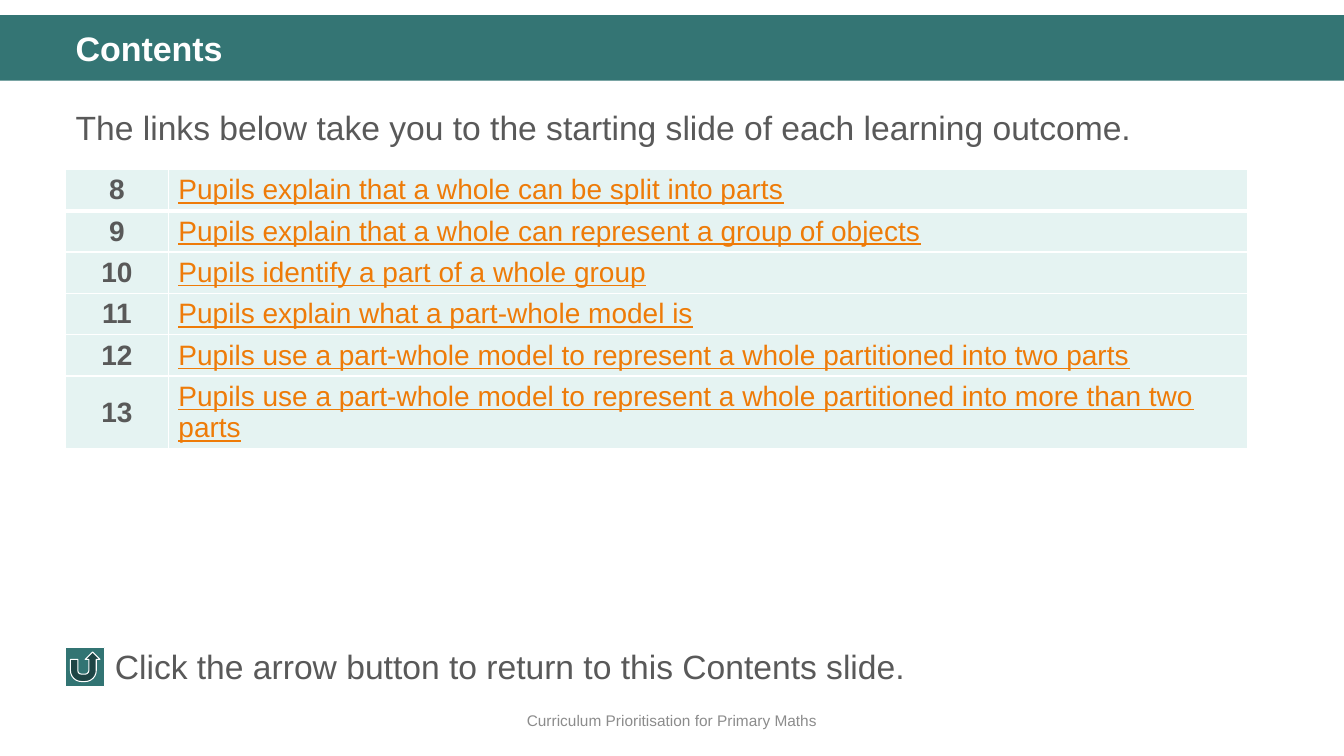
"""Build the contents slide of a primary maths deck."""
from dataclasses import dataclass

from lxml import etree
from pptx import Presentation
from pptx import util as u
from pptx.dml.color import RGBColor
from pptx.enum import shapes, text
from pptx.oxml import ns


@dataclass(frozen=True)
class Theme:
    """Hold the font, colours and type sizes."""
    font: str = "Arial"
    white: str = "FFFFFF"
    band: str = "347574"
    button: str = "327473"
    row: str = "E5F3F2"
    ink: str = "595959"
    link: str = "EE7B08"
    muted: str = "8C8C8C"
    title: float = 24.3
    body: float = 24
    table: float = 20
    footer: float = 11


THEME = Theme()
FIRST_NUMBER = 8
OUTCOMES = [
    "Pupils explain that a whole can be split into parts",
    "Pupils explain that a whole can represent a group of objects",
    "Pupils identify a part of a whole group",
    "Pupils explain what a part-whole model is",
    "Pupils use a part-whole model to represent a whole partitioned into two parts",
    "Pupils use a part-whole model to represent a whole partitioned into more than two parts",
]


def inches(*lengths):
    """Convert numbers to lengths."""
    return [u.Inches(length) for length in lengths]


def write(frame, words, size, colour, bold=False, underline=False,
          align=text.PP_ALIGN.LEFT, spacing=1.0, anchor=text.MSO_ANCHOR.TOP):
    """Write one formatted paragraph into a text frame."""
    frame.word_wrap = True
    frame.vertical_anchor = anchor
    para = frame.paragraphs[0]
    para.alignment = align
    para.line_spacing = spacing
    para.space_before = u.Pt(0)
    span = para.add_run()
    span.text = words
    span.font.name = THEME.font
    span.font.size = u.Pt(size)
    span.font.bold = bold
    span.font.underline = underline
    span.font.color.rgb = RGBColor.from_string(colour)


def remove_bullet(para):
    """Clear the bullet and its indent."""
    props = para._p.get_or_add_pPr()
    props.set("marL", "0")
    props.set("indent", "0")
    etree.SubElement(props, ns.qn("a:buNone"))


def fill_placeholder(holder, bounds, words, size, colour, **style):
    """Move a placeholder and write its text."""
    holder.left, holder.top, holder.width, holder.height = inches(*bounds)
    holder.text_frame.auto_size = text.MSO_AUTO_SIZE.NONE
    remove_bullet(holder.text_frame.paragraphs[0])
    write(holder.text_frame, words, size, colour, **style)


def add_label(page, bounds, words, size, colour, **style):
    """Add a text box."""
    box = page.shapes.add_textbox(*inches(*bounds))
    write(box.text_frame, words, size, colour, **style)


def add_block(page, kind, bounds, fill, line=None):
    """Add a filled preset shape."""
    block = page.shapes.add_shape(kind, *inches(*bounds))
    block.shadow.inherit = False
    block.fill.solid()
    block.fill.fore_color.rgb = RGBColor.from_string(fill)
    if line:
        block.line.color.rgb = RGBColor.from_string(line)
        block.line.width = u.Pt(0.75)
    else:
        block.line.fill.background()
    return block


def style_cell(cell, top, bottom):
    """Give a cell its white borders and its fill."""
    props = cell._tc.get_or_add_tcPr()
    for side, width in (("L", 1), ("R", 1), ("T", top), ("B", bottom)):
        border = etree.SubElement(props, ns.qn(f"a:ln{side}"), w=str(u.Pt(width)))
        paint = etree.SubElement(border, ns.qn("a:solidFill"))
        etree.SubElement(paint, ns.qn("a:srgbClr"), val=THEME.white)
    cell.fill.solid()
    cell.fill.fore_color.rgb = RGBColor.from_string(THEME.row)
    cell.vertical_anchor = text.MSO_ANCHOR.MIDDLE


def add_outcomes(page):
    """Add the table of numbered learning outcomes."""
    heights = [0.41] * (len(OUTCOMES) - 1) + [0.71]
    widths = [1.02, 10.7]
    bounds = inches(0.65, 1.68, sum(widths), sum(heights))
    table = page.shapes.add_table(len(heights), len(widths), *bounds).table
    table.first_row = table.horz_banding = False
    for column, width in zip(table.columns, widths):
        column.width = u.Inches(width)
    for index, (row, height, outcome) in enumerate(zip(table.rows, heights, OUTCOMES)):
        row.height = u.Inches(height)
        number, link = row.cells
        for cell in (number, link):
            style_cell(cell, 3 if index == 1 else 1, 3 if index == 0 else 1)
        write(number.text_frame, str(FIRST_NUMBER + index), THEME.table, THEME.ink,
              bold=True, align=text.PP_ALIGN.CENTER, anchor=text.MSO_ANCHOR.MIDDLE)
        write(link.text_frame, outcome, THEME.table, THEME.link,
              underline=True, anchor=text.MSO_ANCHOR.MIDDLE)


def main():
    """Build and save the deck."""
    deck = Presentation()
    deck.slide_width, deck.slide_height = inches(13.33, 7.5)
    page = deck.slides.add_slide(deck.slide_layouts[1])
    title, body = page.placeholders

    band = add_block(page, shapes.MSO_SHAPE.RECTANGLE, (0, 0.15, 13.33, 0.65), THEME.band)
    page.shapes._spTree.insert(2, band._element)
    fill_placeholder(title, (0.65, 0.27, 12.18, 0.47), "Contents",
                     THEME.title, THEME.white, bold=True, spacing=0.9)
    fill_placeholder(body, (0.65, 0.93, 12.18, 0.7),
                     "The links below take you to the starting slide of each learning outcome.",
                     THEME.body, THEME.ink, spacing=1.2)
    add_outcomes(page)
    add_block(page, shapes.MSO_SHAPE.ACTION_BUTTON_RETURN, (0.65, 6.42, 0.39, 0.39),
              THEME.button, THEME.white)
    add_label(page, (1.04, 6.36, 11.32, 0.5),
              "Click the arrow button to return to this Contents slide.",
              THEME.body, THEME.ink)
    add_label(page, (0, 6.95, 13.33, 0.4), "Curriculum Prioritisation for Primary Maths",
              THEME.footer, THEME.muted, align=text.PP_ALIGN.CENTER,
              anchor=text.MSO_ANCHOR.MIDDLE)
    deck.save("out.pptx")


if __name__ == "__main__":
    main()
